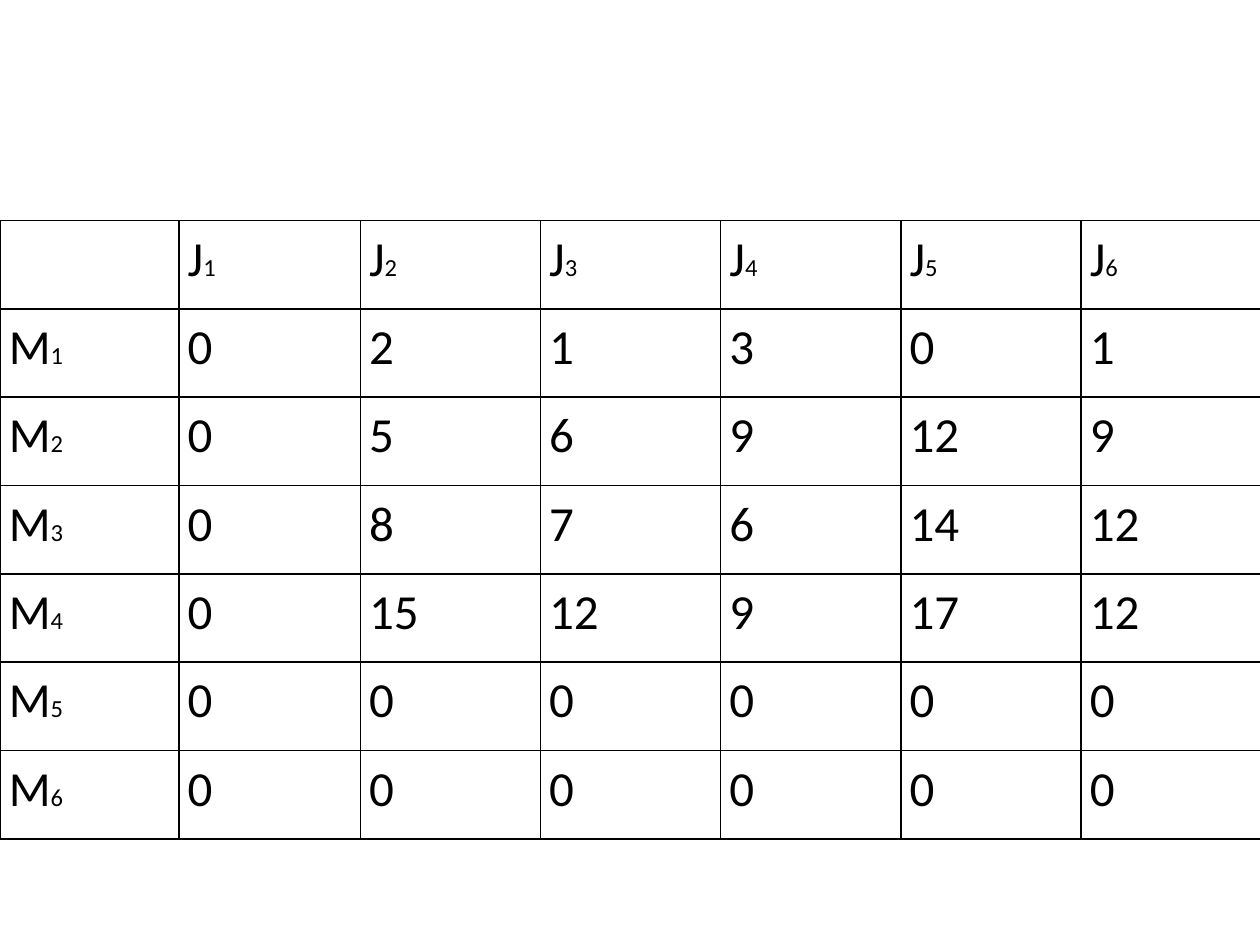
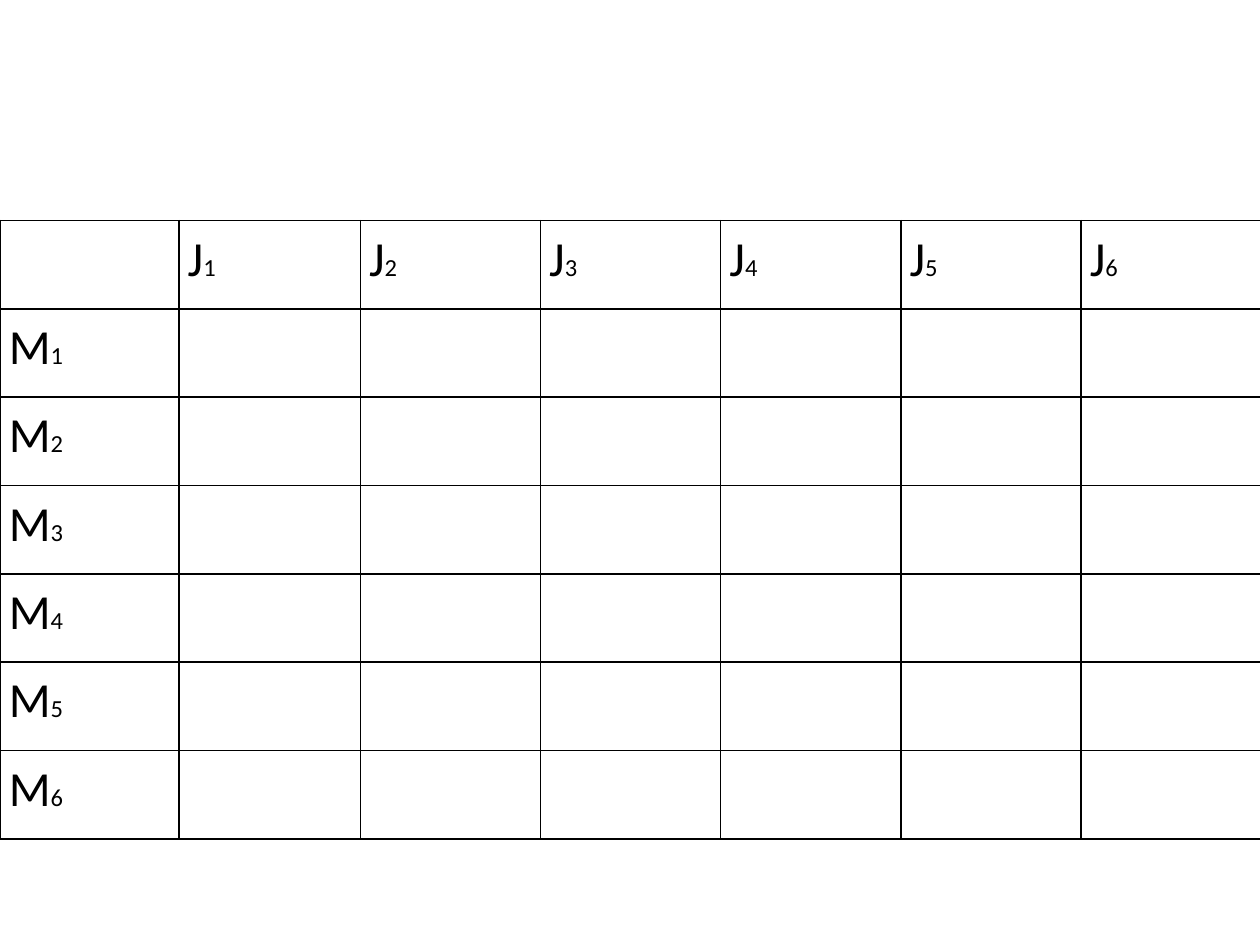
"""Build two job-by-machine tables: one with values, one to fill in."""
import pptx
import pptx.dml.color
import pptx.oxml
import pptx.oxml.ns
import pptx.util

Inches, Pt = pptx.util.Inches, pptx.util.Pt

JOBS = [("J", str(number)) for number in range(1, 7)]
MACHINES = [("M", str(number)) for number in range(1, 7)]
TIMES = [
    [0, 2, 1, 3, 0, 1],
    [0, 5, 6, 9, 12, 9],
    [0, 8, 7, 6, 14, 12],
    [0, 15, 12, 9, 17, 12],
    [0, 0, 0, 0, 0, 0],
    [0, 0, 0, 0, 0, 0],
]
FILLED = [[(str(time),) for time in row] for row in TIMES]
UNFILLED = [[()] * len(JOBS) for _ in MACHINES]

BLACK = pptx.dml.color.RGBColor(0x00, 0x00, 0x00)
FONT = {"name": "Calibri"}
SIZES = [Pt(28), Pt(14)]
MARGINS = {
    "margin_left": Inches(0.07),
    "margin_right": Inches(0.07),
    "margin_top": 0,
    "margin_bottom": 0,
}
TABLE_TOP, TABLE_HEIGHT = Inches(1.75), Inches(4.91)
COLUMN_WIDTHS = [1.42, 1.44] + [1.43] * 5
BORDER = (
    '<a:{side} {ns} w="{width}"><a:solidFill><a:srgbClr val="{color}"/>'
    "</a:solidFill></a:{side}>"
)


def set_format(target, values):
    for name, value in values.items():
        setattr(target, name, value)


def draw_borders(cell):
    properties = cell._tc.get_or_add_tcPr()
    for side in ("lnL", "lnR", "lnT", "lnB"):
        properties.append(pptx.oxml.parse_xml(BORDER.format(
            side=side, ns=pptx.oxml.ns.nsdecls("a"), width=Pt(1), color=BLACK)))


def write_cell(cell, parts):
    draw_borders(cell)
    cell.fill.background()
    set_format(cell, MARGINS)
    paragraph = cell.text_frame.paragraphs[0]
    paragraph.line_spacing = 1.15
    for part, size in zip(parts, SIZES):
        run = paragraph.add_run()
        run.text = part
        set_format(run.font, {**FONT, "size": size})
        run.font.color.rgb = BLACK


def add_schedule(deck, body):
    rows = [[()] + JOBS] + [[machine] + row for machine, row in zip(MACHINES, body)]
    slide = deck.slides.add_slide(deck.slide_layouts[6])
    schedule = slide.shapes.add_table(
        len(rows), len(rows[0]), 0, TABLE_TOP, deck.slide_width, TABLE_HEIGHT).table
    set_format(schedule, {"first_row": False, "horz_banding": False})
    for column, width in zip(schedule.columns, COLUMN_WIDTHS):
        column.width = Inches(width)
    for row_number, row in enumerate(rows):
        for column_number, parts in enumerate(row):
            write_cell(schedule.cell(row_number, column_number), parts)


def main():
    deck = pptx.Presentation()
    set_format(deck, {"slide_width": Inches(10), "slide_height": Inches(7.5)})
    for body in (FILLED, UNFILLED):
        add_schedule(deck, body)
    deck.save("out.pptx")


if __name__ == "__main__":
    main()
